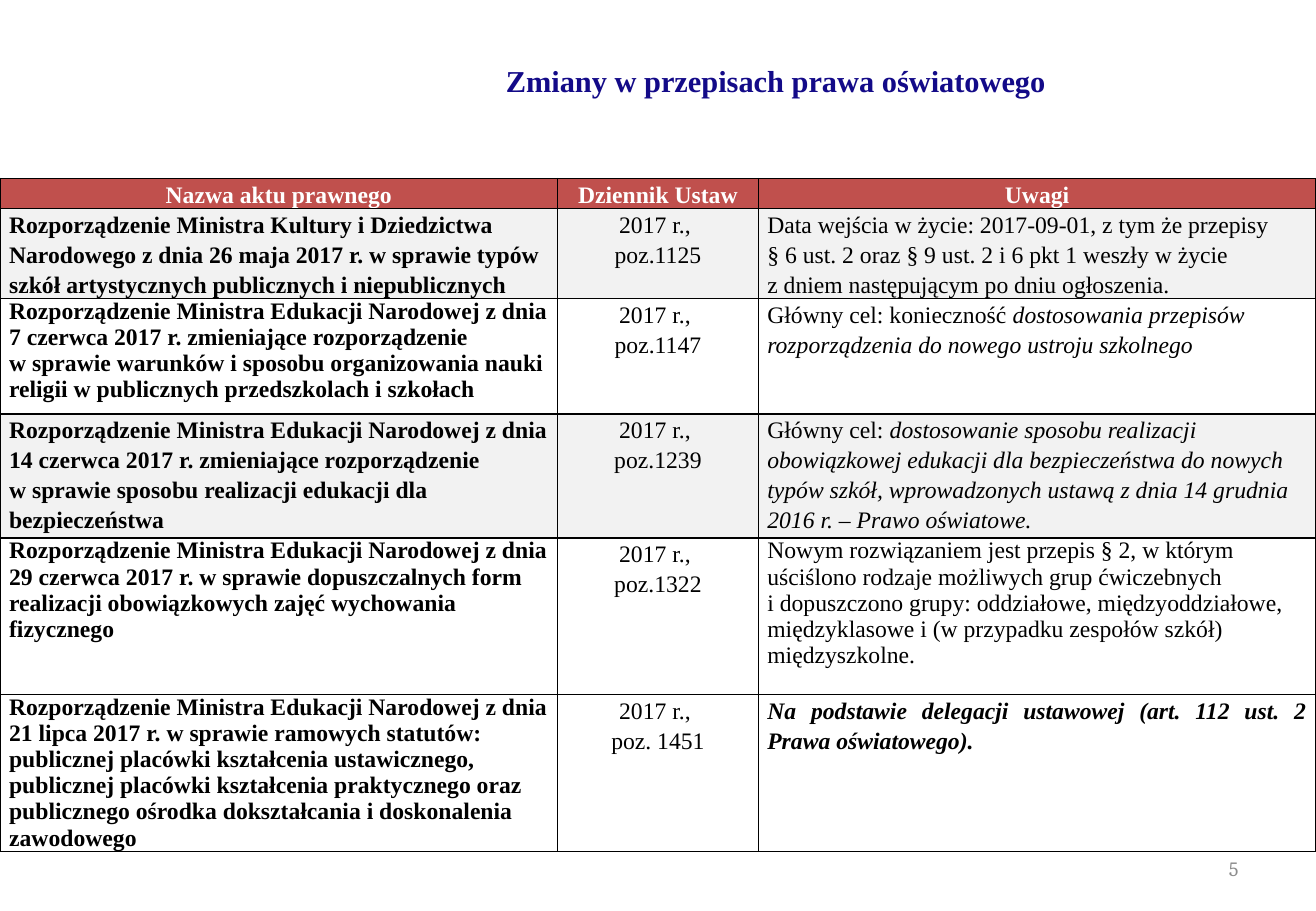
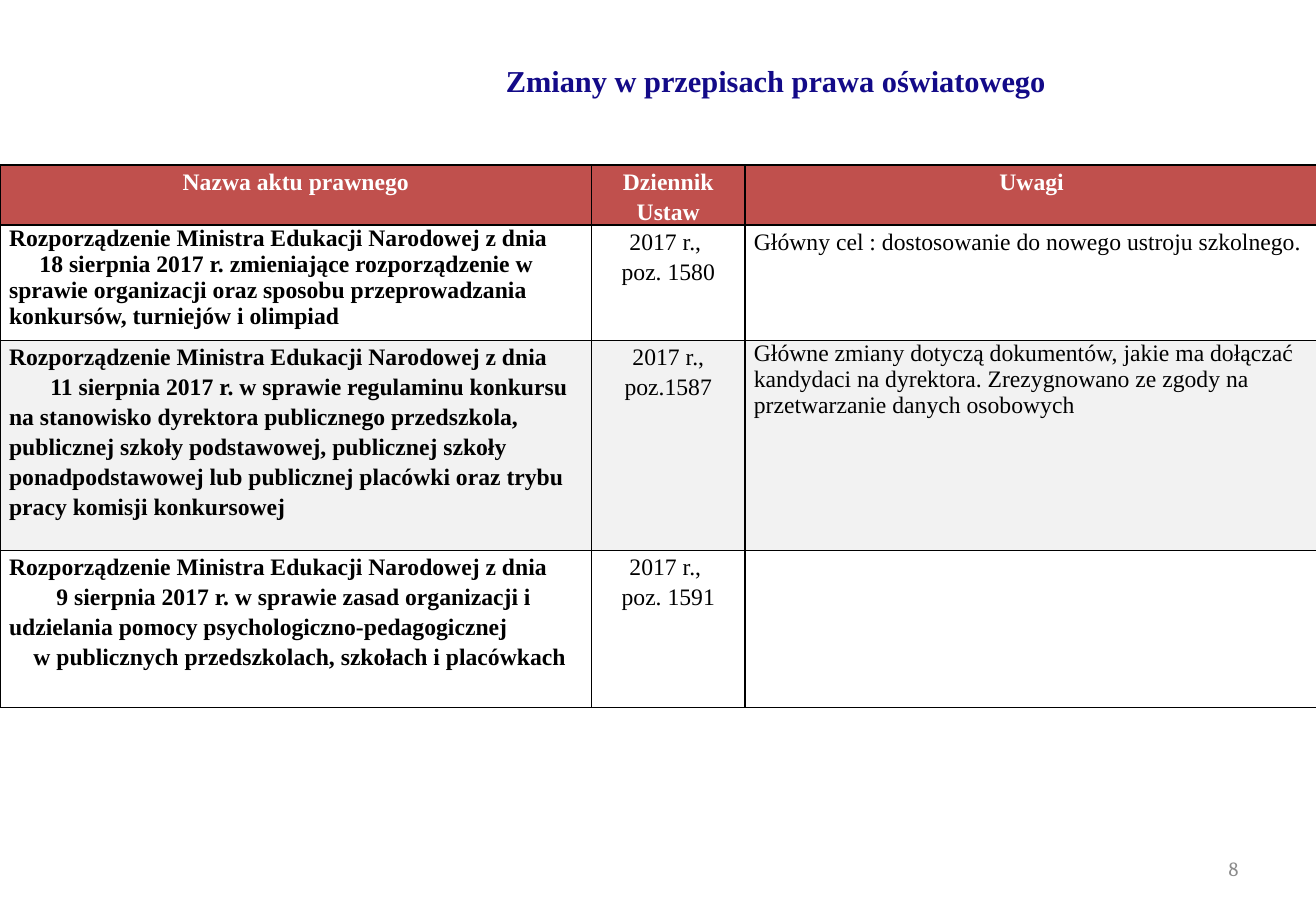
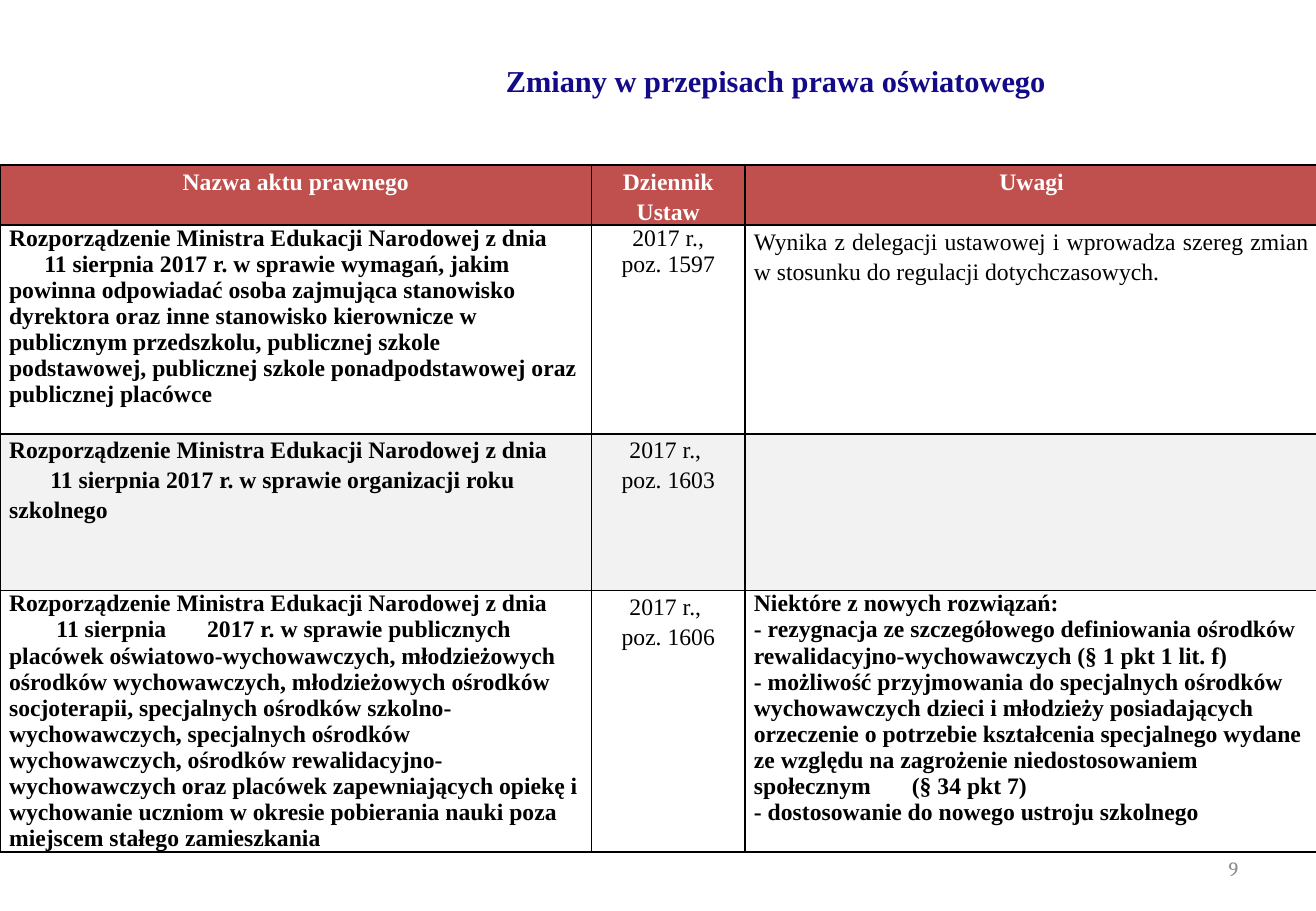
"""Build three slides that list changes in education law."""
from lxml import etree
from pptx import Presentation
from pptx.dml.color import RGBColor
from pptx.enum.text import MSO_ANCHOR, PP_ALIGN
from pptx.oxml.ns import qn
from pptx.util import Inches, Pt

LEFT, MID, RIGHT, JUST = PP_ALIGN.LEFT, PP_ALIGN.CENTER, PP_ALIGN.RIGHT, PP_ALIGN.JUSTIFY
CENTRAL = MSO_ANCHOR.MIDDLE

NAVY = RGBColor(0x13, 0x0A, 0x88)
RED = RGBColor(0xC0, 0x50, 0x4D)
PALE = RGBColor(0xF2, 0xF2, 0xF2)
WHITE = RGBColor(0xFF, 0xFF, 0xFF)
BLACK = RGBColor(0, 0, 0)
GREY = RGBColor(0x8C, 0x8C, 0x8C)

SERIF, PAGE = "Times New Roman", "Cambria"
WIDE, HIGH = 10.83, 7.5
LOOSE, TIGHT = 1.15, 1.0
TITLE = "Zmiany w przepisach prawa oświatowego"
HEADS = ["Nazwa aktu prawnego", "Dziennik Ustaw", "Uwagi"]
MEN = "Rozporządzenie Ministra Edukacji Narodowej z dnia"


def cell(*paras, gap=LOOSE, **form):
    """Pair paragraphs, each a string or (indent, text, tabs...), with a format."""
    return paras, dict(form, gap=gap)


def act(*paras, gap=LOOSE):
    """Describe a cell that names a legal act."""
    return cell(*paras, gap=gap, bold=True)


def issue(*paras, gap=LOOSE):
    """Describe a cell that cites the journal of laws."""
    return cell(*paras, gap=gap, align=MID)


NARROW = [4.87, 1.26, 4.72]
SLIDES = [
    dict(page="5", top=1.47, cols=[4.59, 1.65, 4.59], head=0.24, rows=[
        (0.74, PALE,
         act("Rozporządzenie Ministra Kultury i Dziedzictwa Narodowego z dnia 26 maja 2017 r. "
             "w sprawie typów szkół artystycznych publicznych i niepublicznych"),
         issue("2017 r., \npoz.1125"),
         cell("Data wejścia w życie: 2017-09-01, z tym że przepisy \n"
              "§ 6 ust. 2 oraz § 9 ust. 2 i 6 pkt 1 weszły w życie \n"
              "z dniem następującym po dniu ogłoszenia.")),
        (0.95, WHITE,
         act(MEN + " 7 czerwca 2017 r. zmieniające rozporządzenie \nw sprawie warunków "
             "i sposobu organizowania nauki religii w publicznych przedszkolach i szkołach",
             gap=TIGHT),
         issue("2017 r., \npoz.1147"),
         cell("Główny cel: konieczność *dostosowania przepisów rozporządzenia "
              "do nowego ustroju szkolnego*")),
        (1.02, PALE,
         act(MEN + " 14 czerwca 2017 r. zmieniające rozporządzenie \n"
             "w sprawie sposobu realizacji edukacji dla bezpieczeństwa"),
         issue("2017 r., \npoz.1239"),
         cell("Główny cel: *dostosowanie sposobu realizacji obowiązkowej edukacji dla "
              "bezpieczeństwa do nowych typów szkół, wprowadzonych ustawą z dnia "
              "14 grudnia 2016 r. – Prawo oświatowe.*")),
        (1.29, WHITE,
         act(MEN + " 29 czerwca 2017 r. w sprawie dopuszczalnych form realizacji "
             "obowiązkowych zajęć wychowania fizycznego", gap=TIGHT),
         issue("2017 r., \npoz.1322"),
         cell("Nowym rozwiązaniem jest przepis § 2, w którym uściślono rodzaje możliwych "
              "grup ćwiczebnych \ni dopuszczono grupy: oddziałowe, międzyoddziałowe, "
              "międzyklasowe i (w przypadku zespołów szkół) międzyszkolne.", gap=TIGHT)),
        (1.29, WHITE,
         act(MEN + " 21 lipca 2017 r. w sprawie ramowych statutów: publicznej placówki "
             "kształcenia ustawicznego, publicznej placówki kształcenia praktycznego oraz "
             "publicznego ośrodka dokształcania i doskonalenia zawodowego", gap=TIGHT),
         issue("2017 r., \npoz. 1451"),
         cell("*Na podstawie delegacji ustawowej (art. 112 ust. 2 Prawa oświatowego).*",
              bold=True, align=JUST)),
    ]),
    dict(page="8", top=1.36, cols=NARROW, head=0.49, rows=[
        (0.95, WHITE,
         act(MEN, (0.25, "18 sierpnia 2017 r. zmieniające rozporządzenie w sprawie "
                   "organizacji oraz sposobu przeprowadzania konkursów, turniejów i olimpiad"),
             gap=TIGHT),
         issue("2017 r., \npoz. 1580"),
         cell("Główny cel : dostosowanie do nowego ustroju szkolnego.", align=JUST)),
        (1.73, PALE,
         act(MEN, (0.34, "11 sierpnia 2017 r. w sprawie regulaminu konkursu na stanowisko "
                   "dyrektora publicznego przedszkola, publicznej szkoły podstawowej, "
                   "publicznej szkoły ponadpodstawowej lub publicznej placówki oraz trybu "
                   "pracy komisji konkursowej")),
         issue("2017 r., poz.1587"),
         cell("Główne zmiany dotyczą dokumentów, jakie ma dołączać kandydaci na dyrektora. "
              "Zrezygnowano ze zgody na przetwarzanie danych osobowych", gap=TIGHT)),
        (1.29, WHITE,
         act(MEN, (0.39, "9 sierpnia 2017 r. w sprawie zasad organizacji i udzielania pomocy "
                   "psychologiczno-pedagogicznej"),
             (0.2, "w publicznych przedszkolach, szkołach i placówkach")),
         issue("2017 r., \npoz. 1591"),
         cell()),
    ]),
    dict(page="9", top=1.36, cols=NARROW, head=0.49, rows=[
        (1.72, WHITE,
         act(MEN, (0.29, "11 sierpnia 2017 r. w sprawie wymagań, jakim powinna odpowiadać "
                   "osoba zajmująca stanowisko dyrektora oraz inne stanowisko kierownicze "
                   "w publicznym przedszkolu, publicznej szkole podstawowej, publicznej "
                   "szkole ponadpodstawowej oraz publicznej placówce"), gap=TIGHT),
         issue("2017 r.,", "poz. 1597", gap=TIGHT),
         cell("Wynika z delegacji ustawowej i wprowadza szereg zmian w stosunku do "
              "regulacji dotychczasowych.", align=JUST)),
        (1.29, PALE,
         act(MEN, (0.34, "11 sierpnia 2017 r. w sprawie organizacji roku szkolnego")),
         issue("2017 r., \npoz. 1603"),
         cell()),
        (2.15, WHITE,
         act(MEN, (0, "\t11 sierpnia\t2017 r. w sprawie publicznych placówek "
                   "oświatowo-wychowawczych, młodzieżowych ośrodków wychowawczych, "
                   "młodzieżowych ośrodków socjoterapii, specjalnych ośrodków "
                   "szkolno-wychowawczych, specjalnych ośrodków wychowawczych, ośrodków "
                   "rewalidacyjno-wychowawczych oraz placówek zapewniających opiekę "
                   "i wychowanie uczniom w okresie pobierania nauki poza miejscem stałego "
                   "zamieszkania", 0.39, 1.63), gap=TIGHT),
         issue("2017 r., \npoz. 1606"),
         cell("Niektóre z nowych rozwiązań:",
              "- rezygnacja ze szczegółowego definiowania ośrodków "
              "rewalidacyjno-wychowawczych (§ 1 pkt 1 lit. f)",
              (0, "- możliwość przyjmowania do specjalnych ośrodków wychowawczych dzieci "
               "i młodzieży posiadających orzeczenie o potrzebie kształcenia specjalnego "
               "wydane \nze względu na zagrożenie niedostosowaniem społecznym\t(§ 34 pkt 7)",
               1.3),
              "- dostosowanie do nowego ustroju szkolnego", gap=TIGHT, bold=True)),
    ]),
]


def write(frame, paras, size=14, face=SERIF, color=BLACK, bold=False, align=LEFT, gap=TIGHT):
    """Fill a frame; a line feed breaks the line and asterisks enclose italics."""
    for num, item in enumerate(paras):
        para = frame.add_paragraph() if num else frame.paragraphs[0]
        lead, text, *tabs = (0, item) if isinstance(item, str) else item
        props = para._p.get_or_add_pPr()
        if lead:
            props.set("marL", "0")
            props.set("indent", str(Inches(lead)))
        if tabs:
            stops = etree.SubElement(props, qn("a:tabLst"))
            for tab in tabs:
                etree.SubElement(stops, qn("a:tab"), pos=str(Inches(tab)), algn="l")
        para.alignment, para.line_spacing = align, gap
        for row, line in enumerate(text.split("\n")):
            if row:
                para.add_line_break()
            for part, words in enumerate(line.split("*")):
                if words:
                    run = para.add_run()
                    run.text = words
                    font = run.font
                    font.size, font.name = Pt(size), face
                    font.bold, font.italic = bold, part % 2 == 1
                    font.color.rgb = color
        etree.SubElement(para._p, qn("a:endParaRPr"), sz=str(size * 100))


def paint(box, fill, side):
    """Give a table cell its margins, black borders and fill."""
    box.margin_left = box.margin_right = Pt(side)
    box.margin_top = box.margin_bottom = 0
    props = box._tc.get_or_add_tcPr()
    for edge in "LRTB":
        line = etree.SubElement(props, qn("a:ln" + edge), w=str(Pt(1)))
        solid = etree.SubElement(line, qn("a:solidFill"))
        etree.SubElement(solid, qn("a:srgbClr"), val=str(BLACK))
    box.fill.solid()
    box.fill.fore_color.rgb = fill


def grid(slide, top, cols, head, rows):
    """Draw the table of legal acts."""
    titles = [cell(name, color=WHITE, bold=True, align=MID) for name in HEADS]
    lines = [(head, RED, *titles), *rows]
    tall = sum(line[0] for line in lines)
    table = slide.shapes.add_table(len(lines), len(cols), 0, Inches(top),
                                   Inches(sum(cols)), Inches(tall)).table
    table.first_row = table.horz_banding = False
    for col, wide in zip(table.columns, cols):
        col.width = Inches(wide)
    for num, (high, fill, *cells) in enumerate(lines):
        table.rows[num].height = Inches(high)
        for col, (paras, form) in enumerate(cells):
            box = table.cell(num, col)
            paint(box, fill, 5.4 if num else 2.7)
            write(box.text_frame, paras, **form)


def place(shape, *spot):
    """Move a text shape and return its centred, wrapping frame."""
    shape.left, shape.top, shape.width, shape.height = map(Inches, spot)
    frame = shape.text_frame
    frame.word_wrap, frame.vertical_anchor = True, CENTRAL
    return frame


def main():
    """Build and save the deck."""
    deck = Presentation()
    deck.slide_width, deck.slide_height = Inches(WIDE), Inches(HIGH)
    for data in SLIDES:
        slide = deck.slides.add_slide(deck.slide_layouts[5])
        frame = place(slide.shapes.title, 2.11, 0.15, 8.55, 1.02)
        write(frame, [TITLE], size=18, color=NAVY, bold=True, align=MID)
        grid(slide, data["top"], data["cols"], data["head"], data["rows"])
        frame = place(slide.shapes.add_textbox(0, 0, 0, 0), 7.76, 6.95, 2.53, 0.4)
        write(frame, [data["page"]], size=12, face=PAGE, color=GREY, align=RIGHT)
    deck.save("out.pptx")


if __name__ == "__main__":
    main()
